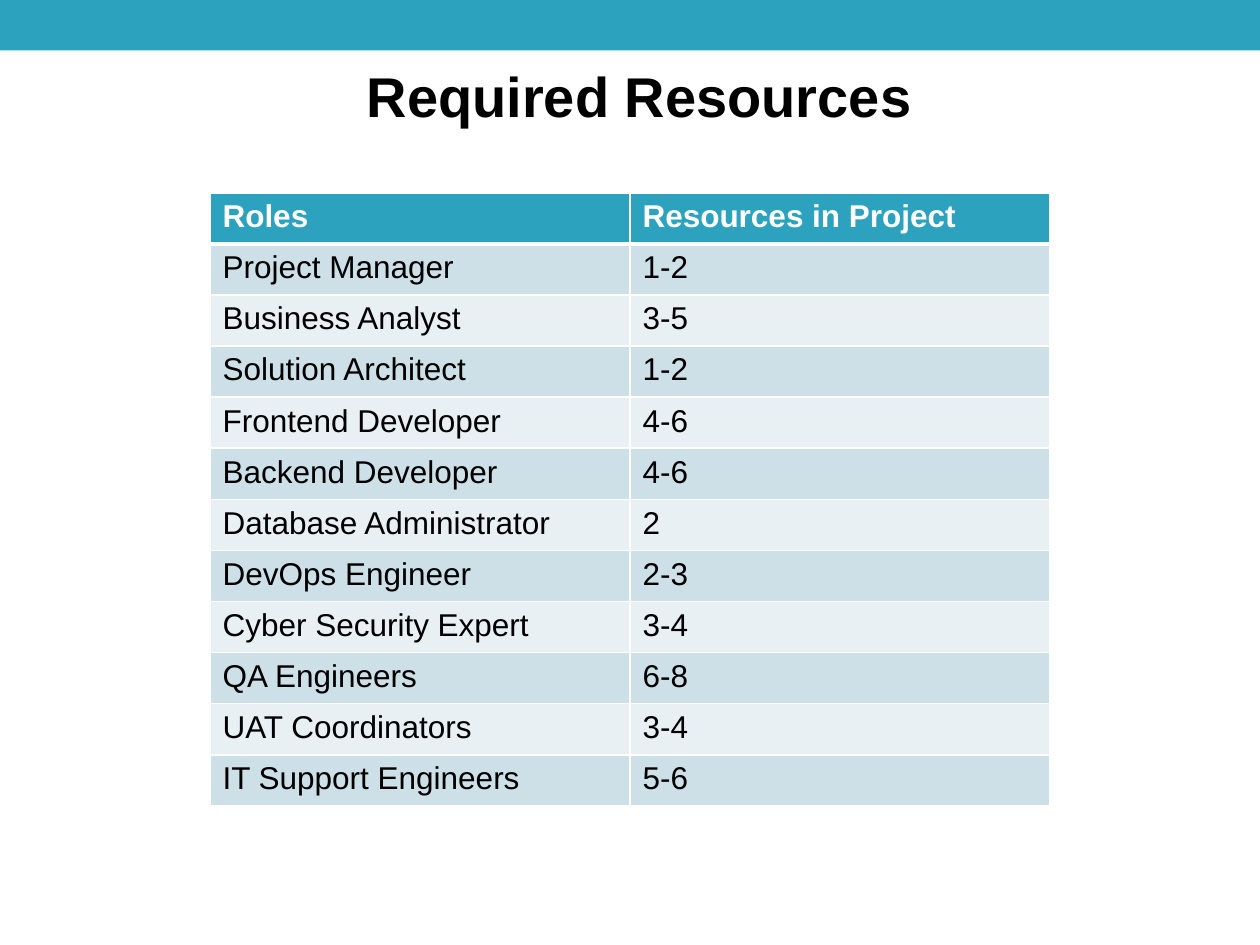
"""Build the Required Resources slide."""
from lxml.etree import SubElement
from pptx import Presentation
from pptx.dml.color import RGBColor
from pptx.enum.shapes import MSO_SHAPE as SHAPE
from pptx.enum.text import MSO_AUTO_SIZE, PP_ALIGN
from pptx.oxml.ns import qn
from pptx.util import Inches, Pt

TITLE = "Required Resources"
ROWS = [
    ("Roles", "Resources in Project"),
    ("Project Manager", "1-2"),
    ("Business Analyst", "3-5"),
    ("Solution Architect", "1-2"),
    ("Frontend Developer", "4-6"),
    ("Backend Developer", "4-6"),
    ("Database Administrator", "2"),
    ("DevOps Engineer", "2-3"),
    ("Cyber Security Expert", "3-4"),
    ("QA Engineers", "6-8"),
    ("UAT Coordinators", "3-4"),
    ("IT Support Engineers", "5-6"),
]
TEAL = RGBColor(0x2D, 0xA2, 0xBF)
BANDS = RGBColor(0xE8, 0xF0, 0xF4), RGBColor(0xCD, 0xE0, 0xE8)
WHITE = RGBColor(0xFF, 0xFF, 0xFF)
BLACK = RGBColor(0, 0, 0)


def style(p, size, color, bold):
    """Format the runs of a paragraph."""
    for r in p.runs:
        r.font.name, r.font.size, r.font.bold = "Arial", Pt(size), bold
        r.font.color.rgb = color


def add_borders(cell, **widths):
    """Draw white cell borders with widths in points."""
    tc_pr = cell._tc.get_or_add_tcPr()
    for side, width in widths.items():
        ln = SubElement(tc_pr, qn(f"a:ln{side}"), w=str(Pt(width)))
        SubElement(SubElement(ln, qn("a:solidFill")), qn("a:srgbClr"), val=str(WHITE))


prs = Presentation()
prs.slide_width, prs.slide_height = Inches(10), Inches(7.5)
s = prs.slides.add_slide(prs.slide_layouts[6])

bar = s.shapes.add_shape(SHAPE.RECTANGLE, 0, 0, prs.slide_width, Inches(0.4))
bar.shadow.inherit = False
bar.fill.solid()
bar.fill.fore_color.rgb = TEAL
bar.line.fill.background()

width, height = prs.slide_width * 2 // 3, Inches(4.87)
left = (prs.slide_width - width) // 2
table = s.shapes.add_table(len(ROWS), 2, left, Inches(1.53), width, height).table
for i, row in enumerate(ROWS):
    header = i == 0
    for j, text in enumerate(row):
        cell = table.cell(i, j)
        add_borders(cell, L=1, R=1, T=3 if i == 1 else 1, B=3 if header else 1)
        cell.fill.solid()
        cell.fill.fore_color.rgb = TEAL if header else BANDS[i % 2]
        cell.text_frame.text = text
        style(cell.text_frame.paragraphs[0], 18, WHITE if header else BLACK, header)

title = s.shapes.add_textbox(Inches(1.61), Inches(0.44), Inches(6.93), Inches(0.64))
tf = title.text_frame
tf.word_wrap = True
tf.auto_size = MSO_AUTO_SIZE.SHAPE_TO_FIT_TEXT
tf.text = TITLE
p = tf.paragraphs[0]
p.alignment = PP_ALIGN.CENTER
style(p, 32, BLACK, True)

prs.save("out.pptx")
